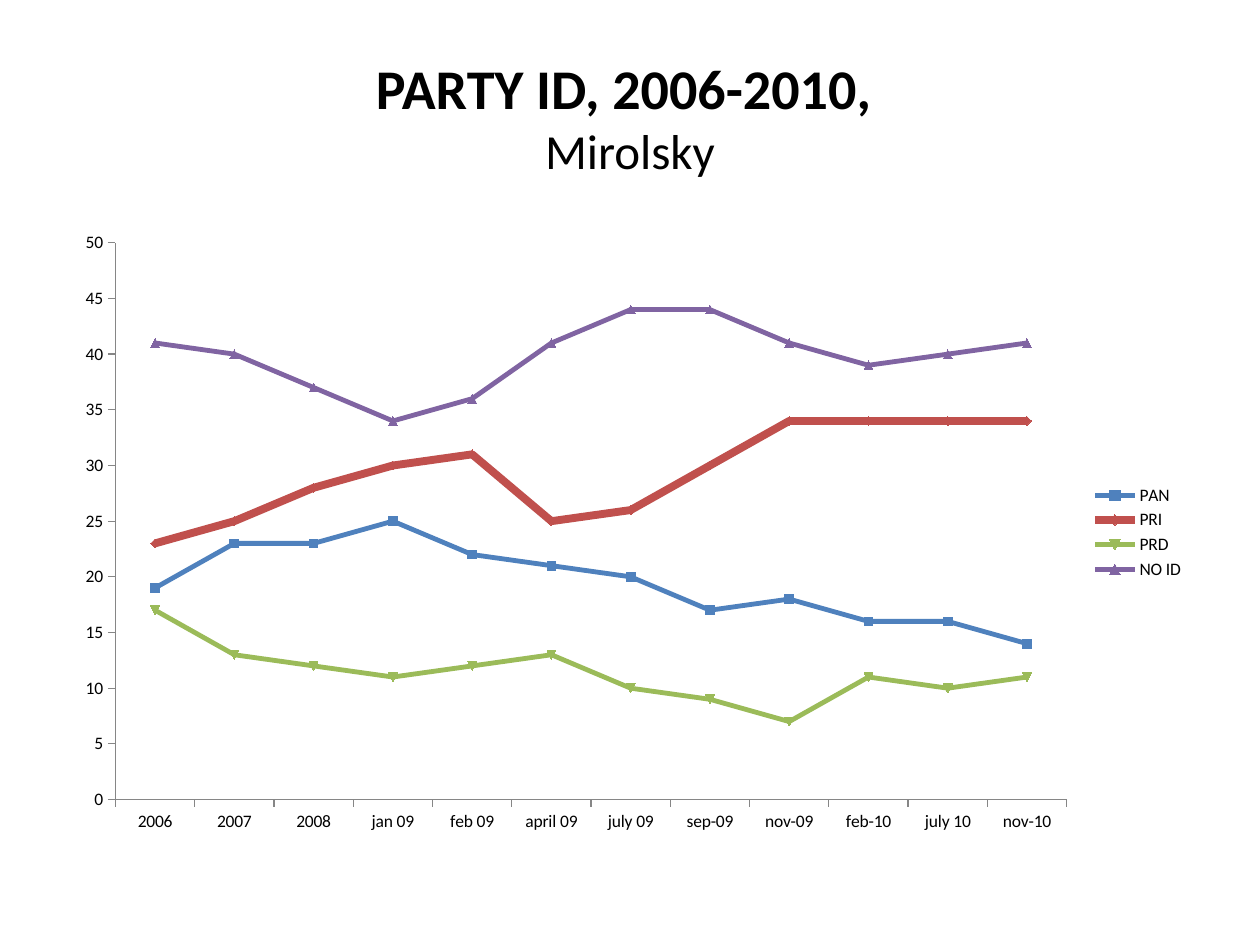
from dataclasses import dataclass

from pptx import Presentation
from pptx.chart import data
from pptx.dml.color import RGBColor
from pptx.enum import chart as ch, text
from pptx.util import Inches, Pt

BLACK = RGBColor(0x00, 0x00, 0x00)
GRAY = RGBColor(0x86, 0x86, 0x86)
BLUE = RGBColor(0x4F, 0x81, 0xBD)
RED = RGBColor(0xC0, 0x50, 0x4D)
GREEN = RGBColor(0x9B, 0xBB, 0x59)
PURPLE = RGBColor(0x80, 0x64, 0xA2)
FONT = "Calibri"


@dataclass(frozen=True)
class Party:
    name: str
    shares: tuple[float, ...]
    color: RGBColor
    width: float = 2.75


PERIODS = ("2006", "2007", "2008", "jan 09", "feb 09", "april 09", "july 09",
           "sep-09", "nov-09", "feb-10", "july 10", "nov-10")
PARTIES = (
    Party("PAN", (19, 23, 23, 25, 22, 21, 20, 17, 18, 16, 16, 14), BLUE),
    Party("PRI", (23, 25, 28, 30, 31, 25, 26, 30, 34, 34, 34, 34), RED, 4.5),
    Party("PRD", (17, 13, 12, 11, 12, 13, 10, 9, 7, 11, 10, 11), GREEN),
    Party("NO ID", (41, 40, 37, 34, 36, 41, 44, 44, 41, 39, 40, 41), PURPLE),
)


def style_font(font, size: float, bold: bool = False) -> None:
    font.name = FONT
    font.size = Pt(size)
    font.bold = bold
    font.color.rgb = BLACK


def add_title(slide) -> None:
    title = slide.shapes.title
    title.left, title.top = Inches(0.5), Inches(0.3)
    title.width, title.height = Inches(9), Inches(1.25)
    title.text_frame.vertical_anchor = text.MSO_ANCHOR.MIDDLE
    heading = title.text_frame.paragraphs[0]
    heading.alignment = text.PP_ALIGN.CENTER
    topic = heading.add_run()
    topic.text = "PARTY ID, 2006-2010, "
    style_font(topic.font, 32, bold=True)
    heading.add_line_break()
    pollster = heading.add_run()
    pollster.text = "Mirolsky"
    style_font(pollster.font, 28)


def style_axis(axis) -> None:
    axis.has_major_gridlines = False
    axis.major_tick_mark = ch.XL_TICK_MARK.OUTSIDE
    axis.minor_tick_mark = ch.XL_TICK_MARK.NONE
    axis.format.line.color.rgb = GRAY
    axis.format.line.width = Pt(0.75)


def style_party(series, party: Party) -> None:
    series.smooth = False
    series.format.line.color.rgb = party.color
    series.format.line.width = Pt(party.width)
    marker = series.marker
    marker.style = ch.XL_MARKER_STYLE.AUTOMATIC
    marker.size = 5
    marker.format.fill.solid()
    marker.format.fill.fore_color.rgb = party.color
    marker.format.line.color.rgb = party.color


def add_party_chart(slide) -> None:
    poll = data.CategoryChartData()
    poll.categories = PERIODS
    for party in PARTIES:
        poll.add_series(party.name, party.shares)
    chart = slide.shapes.add_chart(
        ch.XL_CHART_TYPE.LINE_MARKERS, Inches(0.5), Inches(1.75),
        Inches(9), Inches(4.95), poll).chart
    style_font(chart.font, 10)
    chart.has_title = False
    chart.has_legend = True
    chart.legend.position = ch.XL_LEGEND_POSITION.RIGHT
    chart.legend.include_in_layout = False
    style_axis(chart.category_axis)
    style_axis(chart.value_axis)
    chart.value_axis.minimum_scale = 0
    chart.value_axis.maximum_scale = 50
    chart.value_axis.major_unit = 5
    plot = chart.plots[0]
    plot.vary_by_categories = False
    for series, party in zip(plot.series, PARTIES):
        style_party(series, party)


def main() -> None:
    deck = Presentation()
    deck.slide_width, deck.slide_height = Inches(10), Inches(7.5)
    slide = deck.slides.add_slide(deck.slide_layouts[5])
    add_title(slide)
    add_party_chart(slide)
    deck.save("out.pptx")


if __name__ == "__main__":
    main()
